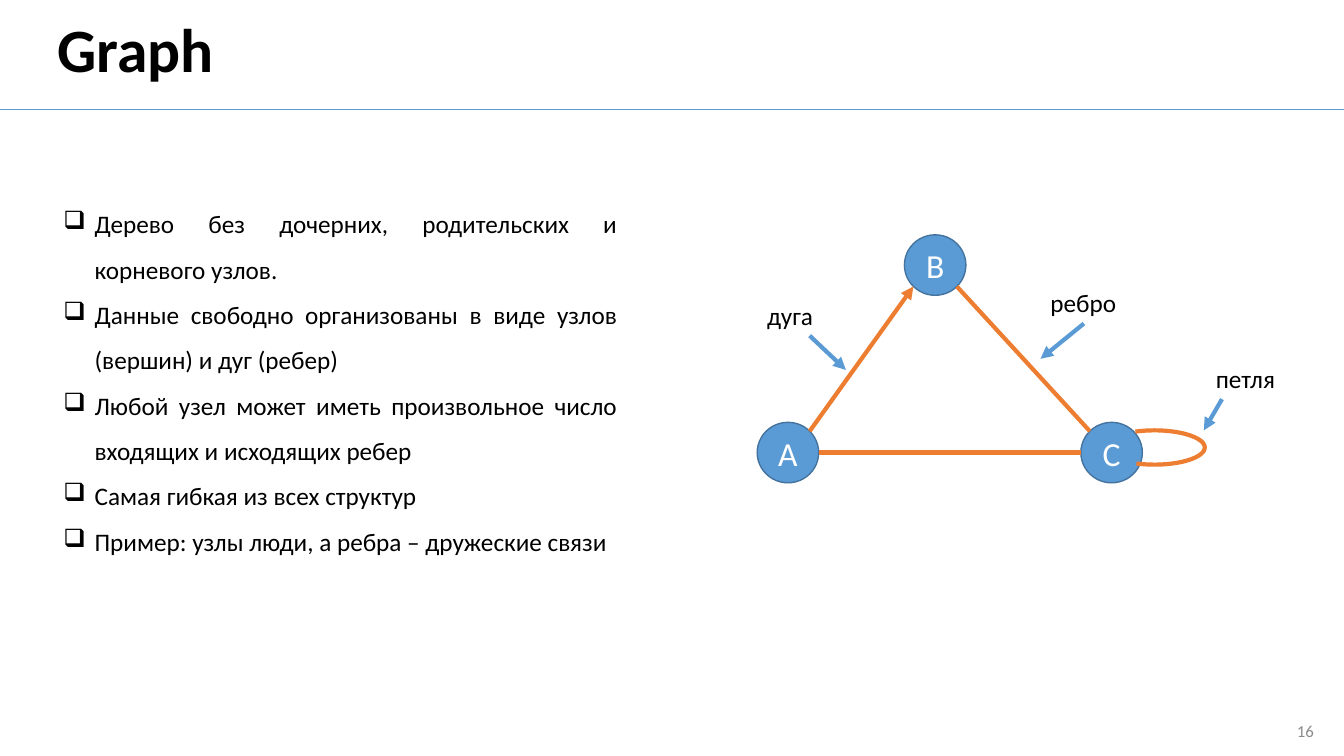
import math

import pptx
import pptx.dml.color
import pptx.enum.shapes
import pptx.enum.text
import pptx.oxml
import pptx.oxml.ns
import pptx.util
from pptx.util import Inches

RGBColor = pptx.dml.color.RGBColor
ALIGN = pptx.enum.text.PP_ALIGN
ANCHOR = pptx.enum.text.MSO_ANCHOR
SHAPE = pptx.enum.shapes.MSO_SHAPE

BLACK = RGBColor(0x00, 0x00, 0x00)
WHITE = RGBColor(0xFF, 0xFF, 0xFF)
GRAY = RGBColor(0x8C, 0x8C, 0x8C)
BLUE = RGBColor(0x5B, 0x9B, 0xD5)
DARK_BLUE = RGBColor(0x43, 0x73, 0x9E)
ORANGE = RGBColor(0xED, 0x7D, 0x31)

FONT = "Calibri"
NODE_WIDTH, NODE_HEIGHT = 0.61, 0.6
DIAGONAL = math.sqrt(0.5)

BULLETS = [
    "Дерево без дочерних, родительских и корневого узлов.",
    "Данные свободно организованы в виде узлов (вершин) и дуг (ребер)",
    "Любой узел может иметь произвольное число входящих и исходящих ребер",
    "Самая гибкая из всех структур",
    "Пример: узлы люди, а ребра – дружеские связи",
]
# Node name: left, top
NODES = {"А": (7.51, 4.19), "B": (8.97, 2.33), "C": (10.72, 4.19)}
# Label: box, pointer start, pointer end
LABELS = {
    "дуга": ((7.51, 2.93, 0.66, 0.4), (8.03, 3.33), (8.39, 3.67)),
    "ребро": ((10.32, 2.8, 0.86, 0.4), (10.75, 3.21), (10.32, 3.56)),
    "петля": ((11.96, 3.56, 0.79, 0.4), (12.12, 3.96), (11.94, 4.27)),
}


def write_text(frame, lines, size=18, color=BLACK, bold=False, align=None,
               anchor=ANCHOR.TOP, spacing=None, bullet=None, wrap=True):
    frame.word_wrap = wrap
    frame.vertical_anchor = anchor
    for index, line in enumerate(lines):
        paragraph = frame.paragraphs[0] if index == 0 else frame.add_paragraph()
        paragraph.alignment = align
        paragraph.line_spacing = spacing
        run = paragraph.add_run()
        run.text = line
        run.font.name = FONT
        run.font.size = pptx.util.Pt(size)
        run.font.bold = bold
        run.font.color.rgb = color
        if bullet:
            add_bullet(paragraph, bullet)


def add_bullet(paragraph, character, indent=Inches(0.31)):
    properties = paragraph._p.get_or_add_pPr()
    properties.set("marL", str(indent))
    properties.set("indent", str(-indent))
    mark = pptx.oxml.parse_xml(
        f'<a:buChar {pptx.oxml.ns.nsdecls("a")} char="{character}"/>')
    properties.append(mark)


def add_text(slide, box, lines, **text_format):
    shape = slide.shapes.add_textbox(*map(Inches, box))
    write_text(shape.text_frame, lines, **text_format)


def add_line(slide, start, end, color, width=3, arrow=False):
    connector = slide.shapes.add_connector(
        pptx.enum.shapes.MSO_CONNECTOR.STRAIGHT, *map(Inches, (*start, *end)))
    connector.line.color.rgb = color
    connector.line.width = pptx.util.Pt(width)
    namespace = pptx.oxml.ns.nsdecls("a")
    if arrow:
        connector.line._get_or_add_ln().append(
            pptx.oxml.parse_xml(f'<a:tailEnd {namespace} type="triangle"/>'))
    connector._element.spPr.append(
        pptx.oxml.parse_xml(f"<a:effectLst {namespace}/>"))


def add_node(slide, name):
    box = (*NODES[name], NODE_WIDTH, NODE_HEIGHT)
    node = slide.shapes.add_shape(SHAPE.OVAL, *map(Inches, box))
    node.shadow.inherit = False
    node.fill.solid()
    node.fill.fore_color.rgb = BLUE
    node.line.color.rgb = DARK_BLUE
    node.line.width = pptx.util.Pt(1)
    write_text(node.text_frame, [name], size=24, color=WHITE,
               align=ALIGN.CENTER, anchor=ANCHOR.MIDDLE)


def node_point(name, across, down):
    """Point on a node's outline, in the given direction from its centre."""
    left, top = NODES[name]
    return (left + NODE_WIDTH / 2 * (1 + across),
            top + NODE_HEIGHT / 2 * (1 + down))


def add_loop(slide):
    box = (10.95, 4.27, 1, 0.34)
    loop = slide.shapes.add_shape(SHAPE.ARC, *map(Inches, box))
    loop.adjustments[0] = 131.913
    loop.adjustments[1] = 82.942
    loop.shadow.inherit = False
    loop.fill.background()
    loop.line.color.rgb = ORANGE
    loop.line.width = pptx.util.Pt(3)


def add_title(slide, text):
    title = slide.shapes.title
    title.left, title.top, title.width, title.height = map(
        Inches, (0.47, 0.04, 9.02, 0.96))
    write_text(title.text_frame, [text], size=44, bold=True, spacing=0.9,
               align=ALIGN.LEFT, anchor=ANCHOR.MIDDLE)


def main():
    presentation = pptx.Presentation()
    presentation.slide_width = Inches(13.33)
    presentation.slide_height = Inches(7.5)
    slide = presentation.slides.add_slide(presentation.slide_layouts[5])

    # Heading, rule and page number
    add_line(slide, (0, 1.09), (13.33, 1.09), BLUE, width=0.5)
    add_title(slide, "Graph")
    add_text(slide, (10.13, 7.05, 3, 0.4), ["16"], size=12, color=GRAY,
             align=ALIGN.RIGHT, anchor=ANCHOR.MIDDLE)

    # Description
    add_text(slide, (0.53, 1.87, 5.69, 3.74), BULLETS, spacing=1.5,
             align=ALIGN.JUSTIFY, bullet="❑")

    # Graph
    for name in NODES:
        add_node(slide, name)
    add_line(slide, node_point("А", DIAGONAL, -DIAGONAL),
             node_point("B", -DIAGONAL, DIAGONAL), ORANGE, arrow=True)
    add_line(slide, node_point("B", DIAGONAL, DIAGONAL),
             node_point("C", -DIAGONAL, -DIAGONAL), ORANGE)
    add_line(slide, node_point("А", 1, 0), node_point("C", -1, 0), ORANGE)
    add_loop(slide)

    # Labels with pointers
    for label, (box, start, end) in LABELS.items():
        add_text(slide, box, [label], wrap=False)
        add_line(slide, start, end, BLUE, arrow=True)

    presentation.save("out.pptx")


if __name__ == "__main__":
    main()
